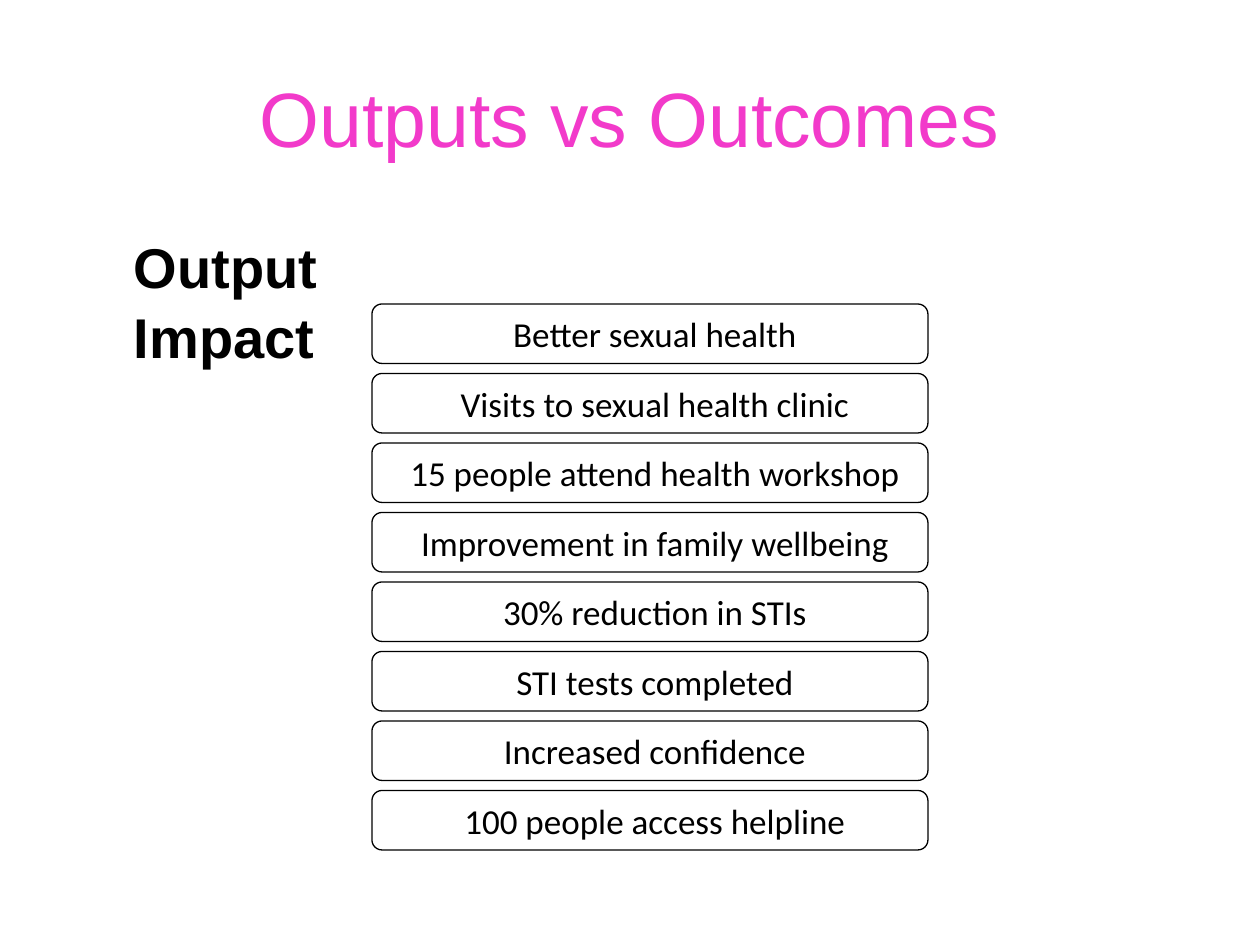
from pptx import Presentation
from pptx.dml.color import RGBColor
from pptx.enum.shapes import MSO_SHAPE
from pptx.enum.text import MSO_ANCHOR, PP_ALIGN
from pptx.util import Pt

ROUND = MSO_SHAPE.ROUNDED_RECTANGLE
TOP, MIDDLE = MSO_ANCHOR.TOP, MSO_ANCHOR.MIDDLE
LEFT, CENTER = PP_ALIGN.LEFT, PP_ALIGN.CENTER

SCALE = 914400 / 126  # EMU in one px


class Theme:
    pink = RGBColor(0xF2, 0x3A, 0xCA)
    black = RGBColor(0, 0, 0)
    white = RGBColor(255, 255, 255)
    title = {"name": "Arial", "size": Pt(44), "bold": False}
    head = {"name": "Arial", "size": Pt(32), "bold": True}
    card = {"name": "Calibri", "size": Pt(20), "bold": False}
    line = Pt(0.75)


HEADS = ["Output", "Impact"]
CARDS = [
    "Better sexual health",
    "Visits to sexual health clinic",
    "15 people attend health workshop",
    "Improvement in family wellbeing",
    "30% reduction in STIs",
    "STI tests completed",
    "Increased confidence",
    "100 people access helpline",
]


def px(n):
    return round(n * SCALE)


def apply(target, values):
    for name, value in values.items():
        setattr(target, name, value)


def write(shape, lines, font, color, align, anchor, before=0, inset=13):
    frame = shape.text_frame
    apply(frame, {"word_wrap": True, "vertical_anchor": anchor,
                  "margin_left": px(inset), "margin_right": px(13),
                  "margin_top": px(6), "margin_bottom": px(6)})
    for i, line in enumerate(lines):
        para = frame.add_paragraph() if i else frame.paragraphs[0]
        apply(para, {"alignment": align, "space_before": Pt(before)})
        run = para.add_run()
        run.text = line
        apply(run.font, font)
        run.font.color.rgb = color


def add_title(slide, x, y, w, h):
    box = slide.shapes.add_textbox(px(x), px(y), px(w), px(h))
    write(box, ["Outputs vs Outcomes"], Theme.title, Theme.pink, CENTER, MIDDLE)


def add_heads(slide, x, y, w, h):
    box = slide.shapes.add_textbox(px(x), px(y), px(w), px(h))
    write(box, HEADS, Theme.head, Theme.black, LEFT, TOP, before=2, inset=60)


def add_cards(slide, x, y, w, h, gap=10):
    # Equal rows share the height left over by the gaps
    step = (h + gap) / len(CARDS)
    for i, text in enumerate(CARDS):
        card = slide.shapes.add_shape(
            ROUND, px(x), px(y + i * step), px(w), px(step - gap))
        card.shadow.inherit = False
        card.adjustments[0] = 0.17
        card.fill.solid()
        card.fill.fore_color.rgb = Theme.white
        card.line.color.rgb = Theme.black
        card.line.width = Theme.line
        # The wider left inset sets the words slightly right of centre
        write(card, [text], Theme.card, Theme.black, CENTER, MIDDLE, inset=23)


def main():
    deck = Presentation()
    apply(deck, {"slide_width": px(1260), "slide_height": px(945)})
    slide = deck.slides.add_slide(deck.slide_layouts[6])
    add_title(slide, 63, 38, 1134, 158)
    add_heads(slide, 74, 226, 1121, 574)
    add_cards(slide, 372, 304, 556, 546)
    deck.save("out.pptx")


if __name__ == "__main__":
    main()
